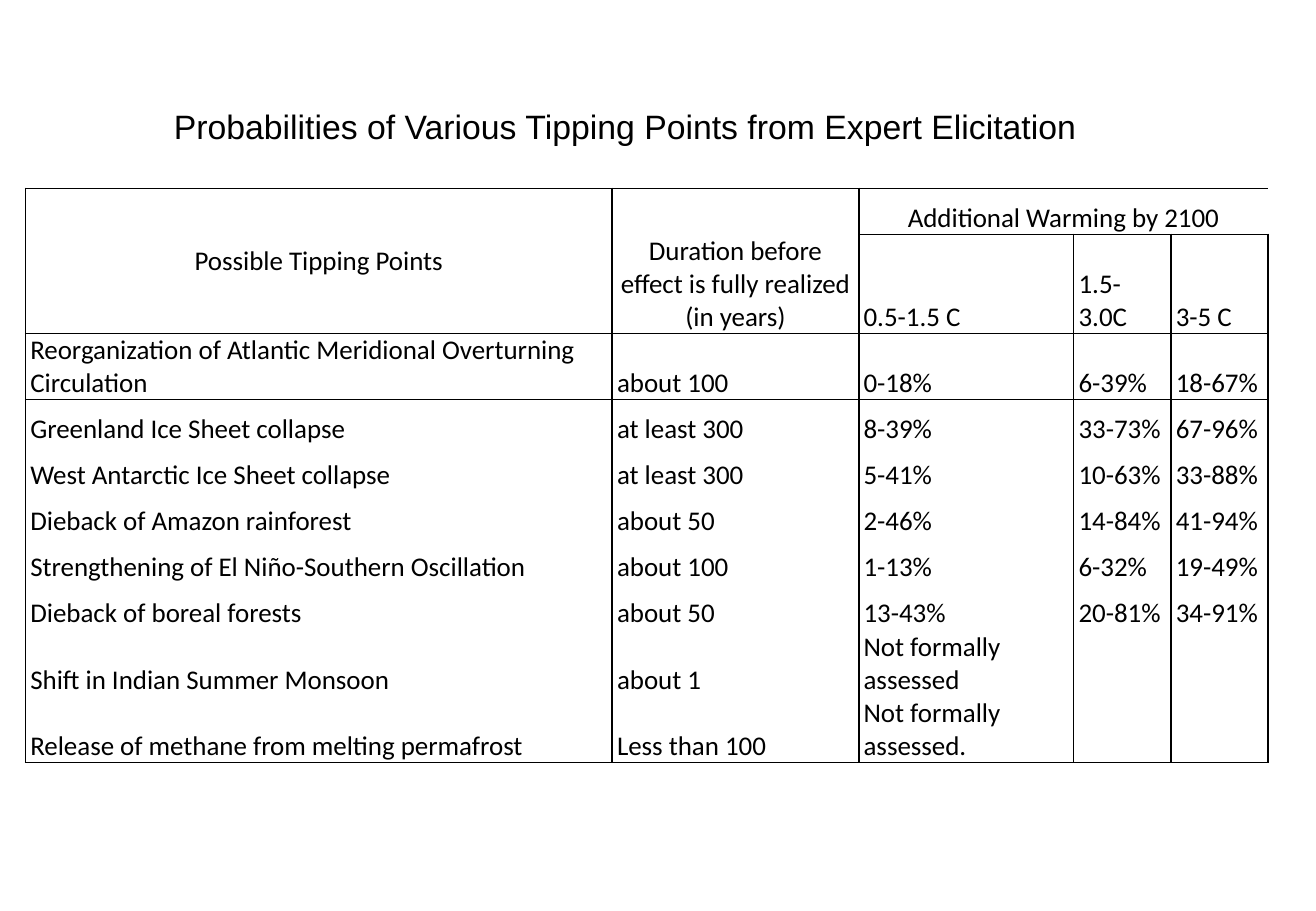
from lxml.etree import SubElement
from pptx import Presentation
from pptx.dml.color import RGBColor
from pptx.enum.text import MSO_ANCHOR, MSO_AUTO_SIZE, PP_ALIGN
from pptx.oxml.ns import qn
from pptx.util import Pt

BLACK = RGBColor(0, 0, 0)
NO_GRID = "{2D5ABB26-0587-4C30-8999-92F81FD0307C}"

TITLE = "Probabilities of Various Tipping Points from Expert Elicitation"
WIDTHS = [347.76, 146.16, 127.44, 57.6, 57.6]
HEIGHTS = [27.36, 29.5, 37.44] + [27.36] * 5 + [37.44] * 2
SPANS = [(0, 0, 1, 0), (0, 1, 1, 1), (0, 2, 0, 4)]
ROWS = [
    ["Possible Tipping Points",
     "Duration before effect is fully realized (in years)",
     "Additional Warming by 2100", "", ""],
    ["", "", "0.5-1.5 C", "1.5-3.0C", "3-5 C"],
    ["Reorganization of Atlantic Meridional Overturning Circulation",
     "about 100", "0-18%", "6-39%", "18-67%"],
    ["Greenland Ice Sheet collapse",
     "at least 300", "8-39%", "33-73%", "67-96%"],
    ["West Antarctic Ice Sheet collapse",
     "at least 300", "5-41%", "10-63%", "33-88%"],
    ["Dieback of Amazon rainforest",
     "about 50", "2-46%", "14-84%", "41-94%"],
    ["Strengthening of El Niño-Southern Oscillation",
     "about 100", "1-13%", "6-32%", "19-49%"],
    ["Dieback of boreal forests",
     "about 50", "13-43%", "20-81%", "34-91%"],
    ["Shift in Indian Summer Monsoon",
     "about 1", "Not formally assessed", "", ""],
    ["Release of methane from melting permafrost",
     "Less than 100", "Not formally assessed.", "", ""],
]


def sides(row, col):
    """Return the ruled sides of a cell, in schema order."""
    rules = {
        "L": row > 0 or col < 3,
        "R": row > 0 or col in (0, 1, 4),
        "T": row in (0, 2) or (row, col) == (1, 2),
        "B": row in (1, len(ROWS) - 1) or (row, col) == (0, 2),
    }
    return [side for side, ruled in rules.items() if ruled]


class Deck:
    def __init__(self, width, height):
        self.prs = Presentation()
        self.prs.slide_width, self.prs.slide_height = Pt(width), Pt(height)
        self.slide = self.prs.slides.add_slide(self.prs.slide_layouts[5])

    def style(self, para, face, size, align):
        para.alignment = align
        for run in para.runs:
            run.font.name, run.font.size = face, Pt(size)
            run.font.color.rgb = BLACK

    def title(self, text, left, top, width, height):
        box = self.slide.shapes.title
        box.left, box.top = Pt(left), Pt(top)
        box.width, box.height = Pt(width), Pt(height)
        frame = box.text_frame
        frame.text = text
        frame.auto_size = MSO_AUTO_SIZE.NONE
        frame.word_wrap = False
        frame.vertical_anchor = MSO_ANCHOR.MIDDLE
        frame.margin_left = frame.margin_right = 0
        frame.margin_top = frame.margin_bottom = 0
        self.style(frame.paragraphs[0], "Arial", 20, PP_ALIGN.LEFT)

    def border(self, cell, names):
        props = cell._tc.get_or_add_tcPr()
        for name in names:
            line = SubElement(props, qn("a:ln" + name), w=str(Pt(1)))
            fill = SubElement(line, qn("a:solidFill"))
            SubElement(fill, qn("a:srgbClr"), val=str(BLACK))

    def cell(self, cell, text, align, anchor, names):
        cell.margin_left = cell.margin_right = Pt(2.88)
        cell.margin_top = cell.margin_bottom = 0
        cell.vertical_anchor = anchor
        self.border(cell, names)
        cell.fill.background()
        if text:
            cell.text_frame.text = text
            self.style(cell.text_frame.paragraphs[0], "Calibri", 16, align)

    def table(self, left, top):
        shape = self.slide.shapes.add_table(
            len(ROWS), len(WIDTHS), Pt(left), Pt(top),
            Pt(sum(WIDTHS)), Pt(sum(HEIGHTS)))
        grid = shape.table
        grid.first_row = grid.horz_banding = False
        grid._tbl.tblPr.find(qn("a:tableStyleId")).text = NO_GRID
        for col, width in zip(grid.columns, WIDTHS):
            col.width = Pt(width)
        for row, height in zip(grid.rows, HEIGHTS):
            row.height = Pt(height)
        for r1, c1, r2, c2 in SPANS:
            grid.cell(r1, c1).merge(grid.cell(r2, c2))
        for r, row in enumerate(ROWS):
            for c, text in enumerate(row):
                align = PP_ALIGN.LEFT if r else PP_ALIGN.CENTER
                anchor = MSO_ANCHOR.BOTTOM if r or c else MSO_ANCHOR.MIDDLE
                self.cell(grid.cell(r, c), text, align, anchor, sides(r, c))


def main():
    deck = Deck(780, 540)
    # Heading
    deck.title(TITLE, 103, 60, 540, 29)
    # Tipping points and their odds
    deck.table(15.12, 111.6)
    deck.prs.save("out.pptx")


if __name__ == "__main__":
    main()
